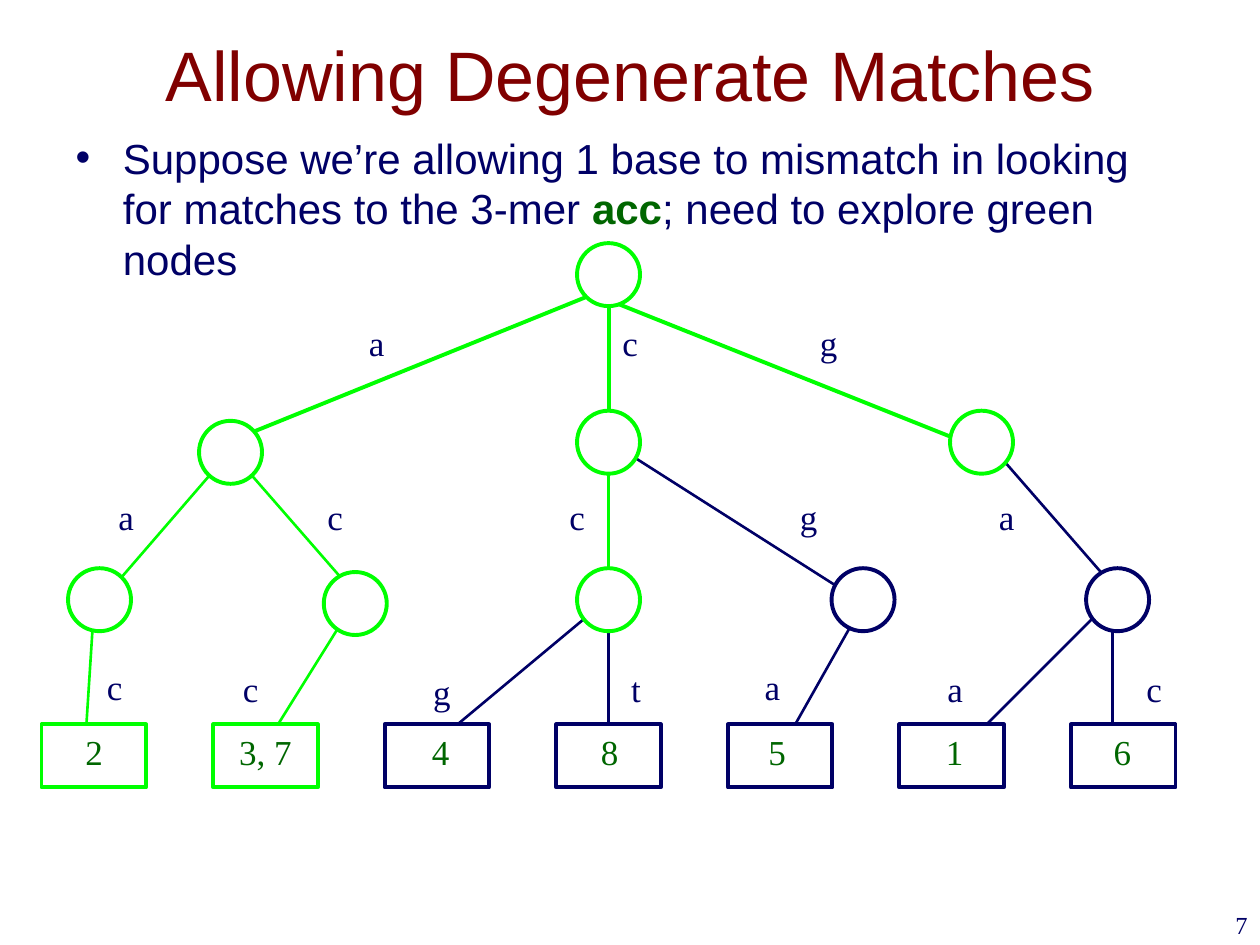
import pptx
import pptx.dml.color
import pptx.enum.shapes
import pptx.enum.text
import pptx.oxml.ns
import pptx.util
from lxml import etree

Inches = pptx.util.Inches
Pt = pptx.util.Pt
Shape = pptx.enum.shapes.MSO_SHAPE
Align = pptx.enum.text.PP_ALIGN
Anchor = pptx.enum.text.MSO_ANCHOR
AutoSize = pptx.enum.text.MSO_AUTO_SIZE

GREEN, NAVY, DARK_GREEN, MAROON, WHITE = "00FF00", "000066", "006600", "800000", "FFFFFF"


def rgb(color):
    return pptx.dml.color.RGBColor.from_string(color)


def assign(target, values):
    for name, value in values.items():
        setattr(target, name, value)


class TreeSlide:
    heading = {"name": "Arial", "size": Pt(40)}
    prose = {"name": "Arial", "size": Pt(24)}
    label = {"name": "Times New Roman", "size": Pt(20)}
    footer = {"name": "Times New Roman", "size": Pt(14)}
    outline = Pt(2.25)

    def __init__(self, slide):
        self.slide = slide

    def add_words(self, paragraph, words, style, color, **extra):
        run = paragraph.add_run()
        run.text = words
        assign(run.font, {**style, **extra})
        run.font.color.rgb = rgb(color)

    def place(self, shape, left, top, width, height):
        assign(shape, {"left": Inches(left), "top": Inches(top),
                       "width": Inches(width), "height": Inches(height)})

    def title(self, words, *box):
        holder = self.slide.shapes.title
        self.place(holder, *box)
        assign(holder.text_frame, {"vertical_anchor": Anchor.MIDDLE, "auto_size": AutoSize.NONE})
        paragraph = holder.text_frame.paragraphs[0]
        paragraph.alignment = Align.CENTER
        self.add_words(paragraph, words, self.heading, MAROON)

    def bullet(self, pieces, *box):
        holder = self.slide.placeholders[1]
        self.place(holder, *box)
        holder.text_frame.auto_size = AutoSize.NONE
        for words, color, bold in pieces:
            self.add_words(holder.text_frame.paragraphs[0], words, self.prose, color, bold=bold)

    def branch(self, start, end, color, weight):
        points = [Inches(value) for value in (*start, *end)]
        line = self.slide.shapes.add_connector(pptx.enum.shapes.MSO_CONNECTOR.STRAIGHT, *points)
        line.line.color.rgb = rgb(color)
        line.line.width = Pt(weight)
        etree.SubElement(line._element.spPr, pptx.oxml.ns.qn("a:effectLst"))
        return line

    def node(self, kind, color, left, top, width, height):
        box = [Inches(value) for value in (left, top, width, height)]
        shape = self.slide.shapes.add_shape(kind, *box)
        shape.shadow.inherit = False
        shape.fill.solid()
        shape.fill.fore_color.rgb = rgb(WHITE)
        shape.line.color.rgb = rgb(color)
        shape.line.width = self.outline
        return shape

    def caption(self, words, left, top, width, color):
        box = self.slide.shapes.add_textbox(Inches(left), Inches(top), Inches(width), Inches(0.43))
        assign(box.text_frame, {"word_wrap": False, "auto_size": AutoSize.SHAPE_TO_FIT_TEXT})
        self.add_words(box.text_frame.paragraphs[0], words, self.label, color)

    def page_number(self, words, *box):
        number = self.slide.shapes.add_textbox(*[Inches(value) for value in box])
        number.text_frame.word_wrap = True
        paragraph = number.text_frame.paragraphs[0]
        paragraph.alignment = Align.RIGHT
        self.add_words(paragraph, words, self.footer, NAVY)


ROOT_BRANCHES = [
    ((4.83, 2.35), (4.83, 3.35)),
    ((4.67, 2.35), (1.83, 3.5)),
    ((4.75, 2.35), (7.83, 3.58)),
]
LOWER_BRANCHES = [
    ((1.83, 3.58), (0.75, 4.83), GREEN),
    ((1.83, 3.58), (2.92, 4.83), GREEN),
    ((4.83, 3.58), (4.83, 4.83), GREEN),
    ((4.83, 3.5), (6.92, 4.83), NAVY),
    ((7.83, 3.5), (8.92, 4.75), NAVY),
    ((0.75, 4.75), (0.67, 6), GREEN),
    ((2.83, 4.75), (2, 6.08), GREEN),
    ((4.83, 4.75), (3.33, 6), NAVY),
    ((6.83, 4.83), (6.17, 6), NAVY),
    ((8.83, 4.75), (7.5, 6.08), NAVY),
    ((8.83, 4.75), (8.83, 6), NAVY),
]
CIRCLES = [
    (4.58, 1.93, GREEN),
    (1.58, 3.34, GREEN), (4.58, 3.26, GREEN), (7.54, 3.26, GREEN),
    (0.54, 4.51, GREEN), (2.57, 4.54, GREEN), (4.58, 4.51, GREEN),
    (6.6, 4.51, NAVY), (8.62, 4.51, NAVY),
]
LEAVES = [
    ("2", 0.58, GREEN), ("3, 7", 1.8, GREEN), ("4", 3.33, NAVY), ("8", 4.67, NAVY),
    ("5", 6, NAVY), ("1", 7.41, NAVY), ("6", 8.74, NAVY),
]
BASES = [
    ("a", 2.83, 2.5), ("c", 4.84, 2.5), ("g", 6.41, 2.5),
    ("a", 0.84, 3.88), ("c", 2.5, 3.88), ("c", 4.42, 3.88), ("g", 6.25, 3.88), ("a", 7.83, 3.88),
    ("c", 0.75, 5.23), ("c", 1.83, 5.25), ("g", 3.34, 5.27), ("t", 4.91, 5.25),
    ("a", 5.97, 5.23), ("a", 7.42, 5.25), ("c", 9, 5.25),
]
CAPTION_WIDTHS = {"a": 0.32, "c": 0.32, "t": 0.28, "3, 7": 0.62}
DIGIT_WIDTH = 0.34
FIRST_LEAF, LAST_LEAF, LEAF_TOP = 0.33, 8.5, 5.75
LEAF_STEP = (LAST_LEAF - FIRST_LEAF) / (len(LEAVES) - 1)


def main():
    deck = pptx.Presentation()
    assign(deck, {"slide_width": Inches(10), "slide_height": Inches(7.5)})
    tree = TreeSlide(deck.slides.add_slide(deck.slide_layouts[1]))

    tree.title("Allowing Degenerate Matches", 0.75, 0.17, 8.5, 0.83)
    tree.bullet([
        ("Suppose we’re allowing 1 base to mismatch in looking for matches to the 3-mer ", NAVY, False),
        ("acc", DARK_GREEN, True),
        ("; need to explore green nodes", NAVY, False),
    ], 0.5, 1, 8.92, 1.25)

    for start, end in ROOT_BRANCHES:
        tree.branch(start, end, GREEN, 2.25)
    for start, end, color in LOWER_BRANCHES:
        tree.branch(start, end, color, 1.5)
    middle_branch = tree.branch((4.83, 4.75), (4.83, LEAF_TOP), NAVY, 1.5)

    for left, top, color in CIRCLES:
        tree.node(Shape.OVAL, color, left, top, 0.5, 0.5)
    for index, (positions, caption_left, color) in enumerate(LEAVES):
        leaf = tree.node(Shape.RECTANGLE, color, FIRST_LEAF + index * LEAF_STEP, LEAF_TOP, 0.83, 0.5)
        tree.caption(positions, caption_left, LEAF_TOP, CAPTION_WIDTHS.get(positions, DIGIT_WIDTH), DARK_GREEN)
        if positions == "8":
            middle_branch.end_connect(leaf, 0)
    for base, left, top in BASES:
        tree.caption(base, left, top, CAPTION_WIDTHS.get(base, DIGIT_WIDTH), NAVY)

    tree.page_number("7", 7.92, 7.17, 2.08, 0.5)
    deck.save("out.pptx")


if __name__ == "__main__":
    main()
